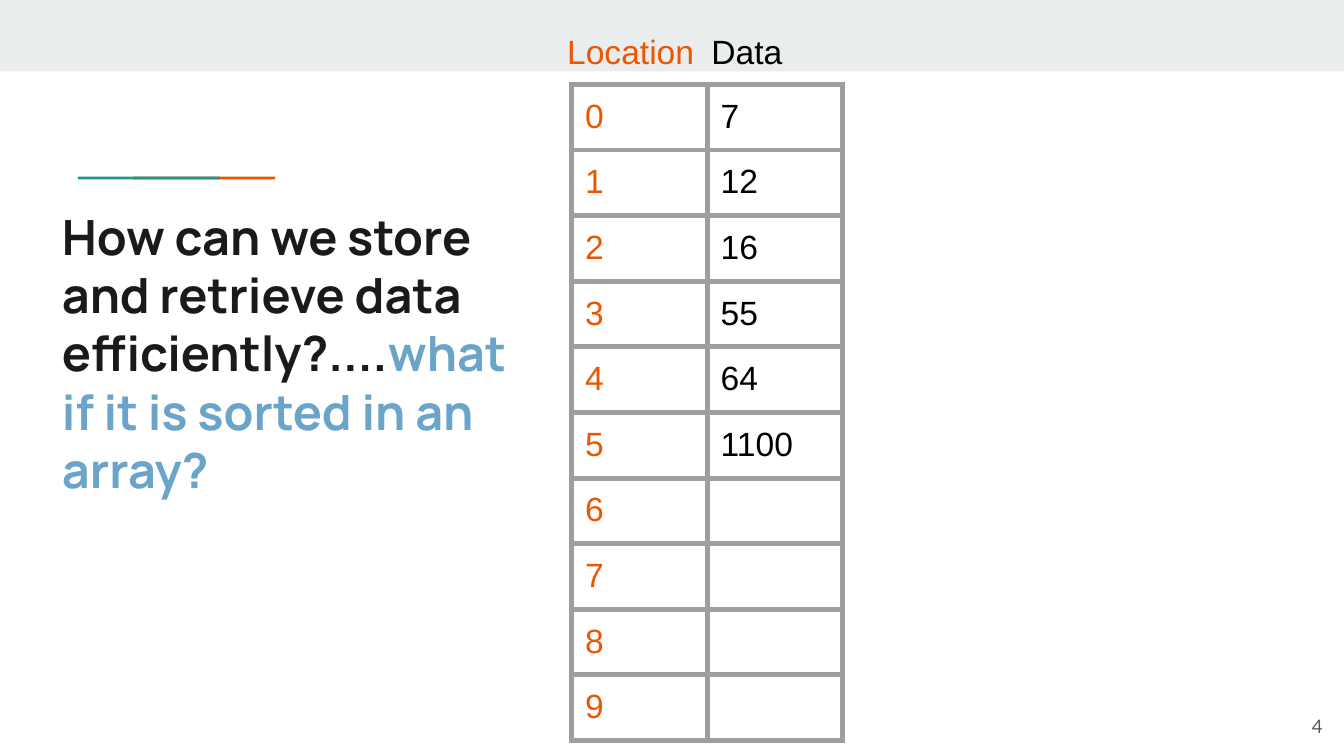
from lxml import etree
from pptx import Presentation
from pptx.dml.color import RGBColor
from pptx.enum import shapes, text
from pptx.oxml import ns
from pptx.util import Pt

COLORS = {
    "band": "E9EDEE", "orange": "EB5600", "teal": "1A9988", "ink": "1A1A1A",
    "blue": "6AA4C8", "black": "000000", "border": "9E9E9E", "gray": "595959",
}
INSET = 7.2
DATA = [7, 12, 16, 55, 64, 1100]
ROWS = 10


def color(name):
    return RGBColor.from_string(COLORS[name])


def add_text(p, words, size=18, font="Arial", ink="black", bold=False,
             align=text.PP_ALIGN.LEFT):
    p.alignment = align
    r = p.add_run()
    r.text = words
    r.font.size = Pt(size)
    r.font.name = font
    r.font.bold = bold
    r.font.color.rgb = color(ink)


def format_frame(tf, anchor=text.MSO_ANCHOR.TOP):
    tf.word_wrap = True
    tf.auto_size = text.MSO_AUTO_SIZE.NONE
    tf.vertical_anchor = anchor
    tf.margin_left = tf.margin_right = Pt(INSET)
    tf.margin_top = tf.margin_bottom = Pt(INSET)


def add_label(s, box, words, anchor=text.MSO_ANCHOR.TOP, **style):
    tf = s.shapes.add_textbox(*map(Pt, box)).text_frame
    format_frame(tf, anchor)
    add_text(tf.paragraphs[0], words, **style)


def add_bar(s, box, fill):
    sp = s.shapes.add_shape(shapes.MSO_SHAPE.RECTANGLE, *map(Pt, box))
    sp.shadow.inherit = False
    sp.fill.solid()
    sp.fill.fore_color.rgb = color(fill)
    sp.line.fill.background()


def add_accent(s, left, top, width, height):
    bar = width * 0.72
    add_bar(s, (left + width - bar, top, bar, height), "orange")
    add_bar(s, (left, top, bar, height), "teal")


def add_title(s, left, top, width, height):
    sp = s.shapes.title
    sp.left, sp.top, sp.width, sp.height = map(Pt, (left, top, width, height))
    format_frame(sp.text_frame)
    p = sp.text_frame.paragraphs[0]
    style = dict(size=26, font="Manrope", bold=True)
    add_text(p, "How can we store and retrieve data efficiently?....", ink="ink", **style)
    add_text(p, "what if it is sorted in an array?", ink="blue", **style)


def set_borders(cell, width=3):
    tc_pr = cell._tc.get_or_add_tcPr()
    for i, side in enumerate(("lnL", "lnR", "lnT", "lnB")):
        ln = etree.Element(ns.qn(f"a:{side}"), w=str(Pt(width)))
        fill = etree.SubElement(ln, ns.qn("a:solidFill"))
        etree.SubElement(fill, ns.qn("a:srgbClr"), val=COLORS["border"])
        tc_pr.insert(i, ln)


def add_array(s, left, top, width, height):
    label_top = top - 36
    add_label(s, (left - 11.5, label_top, 84.2, 26.6), "Location",
              ink="orange", align=text.PP_ALIGN.RIGHT)
    add_label(s, (left + 67.7, label_top, 71.3, 26.6), "Data")

    table = s.shapes.add_table(ROWS, 2, *map(Pt, (left, top, width, height))).table
    table.first_row = table.horz_banding = False
    for col in table.columns:
        col.width = Pt(width / 2)
    for i, row in enumerate(table.rows):
        row.height = Pt(height / ROWS)
        value = str(DATA[i]) if i < len(DATA) else ""
        for cell, words, ink in zip(row.cells, (str(i), value), ("orange", "black")):
            margin = INSET if words else 0
            cell.margin_left = cell.margin_right = Pt(INSET)
            cell.margin_top = cell.margin_bottom = Pt(margin)
            cell.fill.background()
            set_borders(cell)
            if words:
                add_text(cell.text_frame.paragraphs[0], words, ink=ink)


def main():
    prs = Presentation()
    prs.slide_width, prs.slide_height = Pt(720), Pt(405)
    s = prs.slides.add_slide(prs.slide_layouts[5])
    add_bar(s, (0, 0, 720, 38.3), "band")
    add_accent(s, 41.8, 94.6, 105.6, 1.5)
    add_title(s, 26, 103.7, 265, 108.7)
    add_array(s, 306.3, 45.2, 145.2, 351.5)
    add_label(s, (672.5, 373.7, 43.2, 31), "4", anchor=text.MSO_ANCHOR.MIDDLE,
              size=10, font="Lato", ink="gray", align=text.PP_ALIGN.RIGHT)
    prs.save("out.pptx")


if __name__ == "__main__":
    main()
